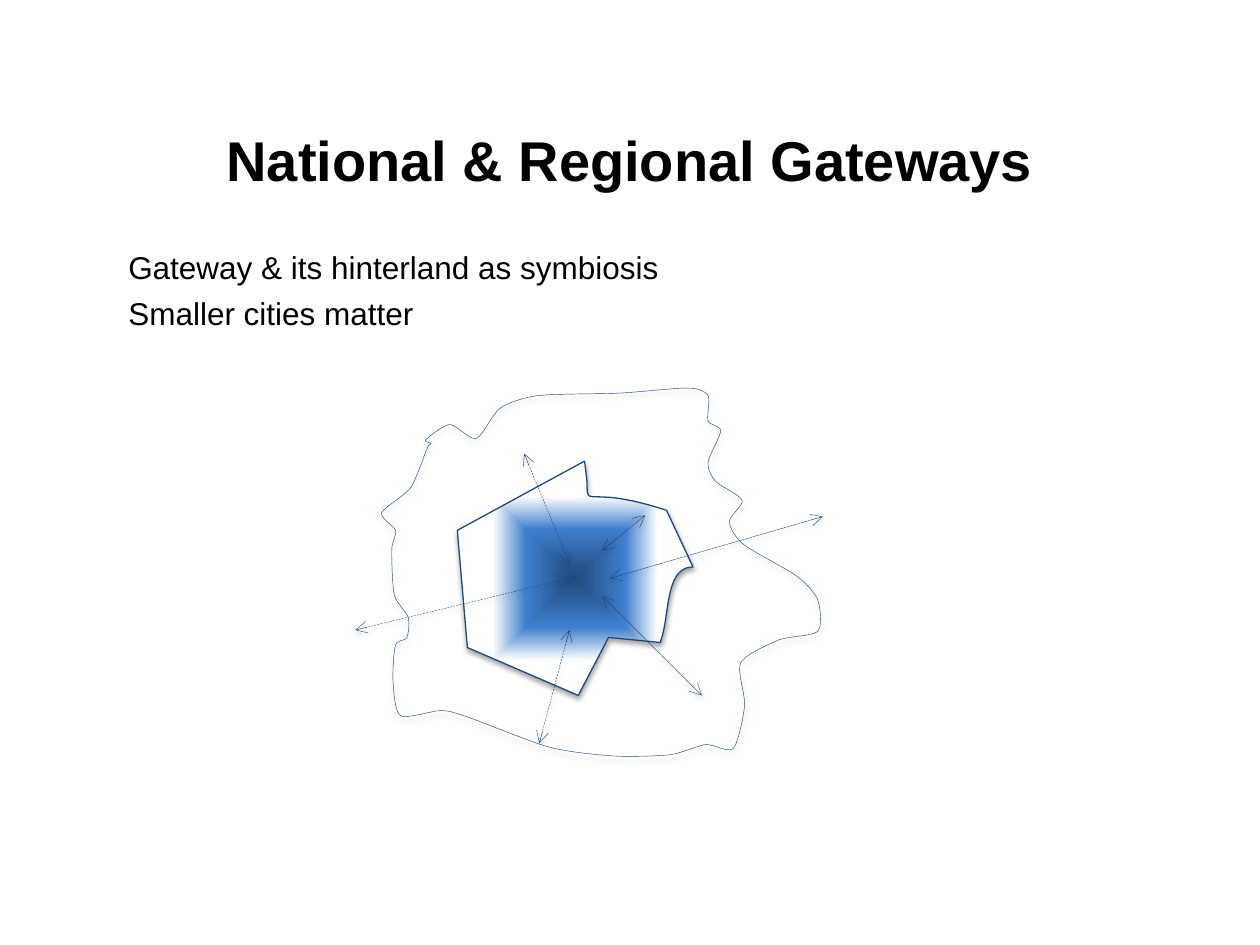
from dataclasses import dataclass
from lxml.etree import SubElement
from pptx import Presentation
from pptx.dml.color import RGBColor
from pptx.enum.dml import MSO_LINE
from pptx.enum.shapes import MSO_CONNECTOR
from pptx.enum.text import MSO_ANCHOR, PP_ALIGN
from pptx.oxml.ns import qn
from pptx.util import Inches, Pt

Point = tuple[float, float]
COLORS = {"text": "000000", "navy": "1F497D", "blue": "3F80CE", "white": "FFFFFF"}
GRADIENT = {"navy": 0, "blue": 42, "white": 70}


@dataclass(frozen=True)
class Flow:
    start: Point
    end: Point
    dash: MSO_LINE


FLOWS_BELOW_COAST = (
    Flow((4.78, 4.37), (5.12, 4.09), MSO_LINE.SQUARE_DOT),
    Flow((4.52, 4.47), (4.16, 3.6), MSO_LINE.DASH),
    Flow((4.52, 5), (4.28, 5.9), MSO_LINE.DASH),
)
FLOWS_ABOVE_COAST = (
    Flow((4.78, 4.73), (5.57, 5.52), MSO_LINE.SQUARE_DOT),
    Flow((4.84, 4.59), (6.53, 4.1), MSO_LINE.SQUARE_DOT),
    Flow((4.52, 4.59), (2.82, 5), MSO_LINE.DASH),
)
COAST = (
    (3.39, 3.56), (3.26, 3.87), (3.03, 4.07), (3.14, 4.21), (3.11, 4.36),
    (3.13, 4.72), (3.24, 4.9), (3.23, 5.06), (3.14, 5.12), (3.12, 5.41),
    (3.18, 5.68), (3.5, 5.64), (3.71, 5.69), (4.36, 5.93), (4.87, 6),
    (5.32, 5.99), (5.6, 5.91), (5.82, 5.94), (5.91, 5.6), (5.88, 5.26),
    (6.18, 5.08), (6.49, 5.01), (6.49, 4.76), (6.32, 4.57), (5.9, 4.32),
    (5.79, 4.14), (5.89, 3.97), (5.68, 3.82), (5.62, 3.67), (5.72, 3.42),
    (5.62, 3.34), (5.62, 3.14), (5.46, 3.08), (4.92, 3.12), (4.27, 3.14),
    (3.97, 3.24), (3.78, 3.48), (3.57, 3.37), (3.38, 3.49), (3.42, 3.52),
)


def curve(start: Point, first: Point, second: Point, end: Point, steps: int = 12) -> list[Point]:
    points = []
    for step in range(steps + 1):
        t = step / steps
        weights = ((1 - t) ** 3, 3 * t * (1 - t) ** 2, 3 * t * t * (1 - t), t ** 3)
        corners = (start, first, second, end)
        points.append(tuple(sum(w * c[axis] for w, c in zip(weights, corners)) for axis in (0, 1)))
    return points


def handle(anchor: Point, toward: Point, away: Point) -> Point:
    return tuple(a + (b - c) / 8 for a, b, c in zip(anchor, toward, away))


def smooth_loop(knots: tuple[Point, ...]) -> list[Point]:
    points = []
    for index, end in enumerate(knots):
        before, start = knots[index - 2], knots[index - 1]
        after = knots[(index + 1) % len(knots)]
        points += curve(start, handle(start, end, before), handle(end, start, after), end)[:-1]
    return points


HINTERLAND = [
    (4.64, 3.66), (3.63, 4.21), (3.71, 5.14), (4.59, 5.52), (4.83, 5.06),
    *curve((5.24, 5.1), (5.32, 4.9), (5.27, 4.5), (5.5, 4.5)),
    *curve((5.29, 4.05), (4.65, 3.84), (4.66, 4.05), (4.66, 3.83)),
]


def add_shadow(shape, distance: float, opacity: int) -> None:
    effects = SubElement(shape._element.spPr, qn("a:effectLst"))
    shadow = SubElement(effects, qn("a:outerShdw"), blurRad=str(Pt(3.1)), dist=str(Pt(distance)),
                        dir="5400000", rotWithShape="0")
    color = SubElement(shadow, qn("a:srgbClr"), val=COLORS["text"])
    SubElement(color, qn("a:alpha"), val=str(opacity * 1000))


def set_line(shape, width: float) -> None:
    shape.line.color.rgb = RGBColor.from_string(COLORS["navy"])
    shape.line.width = Pt(width)


def add_region(shapes, points: list[Point], line_width: float):
    corners = [(Inches(x), Inches(y)) for x, y in points]
    builder = shapes.build_freeform(*corners[0])
    builder.add_line_segments(corners[1:], close=True)
    region = builder.convert_to_shape()
    region.fill.background()
    set_line(region, line_width)
    add_shadow(region, 1.8, 35)
    return region


def fill_from_center(shape) -> None:
    properties = shape._element.spPr
    empty_fill = properties.find(qn("a:noFill"))
    gradient = SubElement(properties, qn("a:gradFill"), rotWithShape="1")
    properties.replace(empty_fill, gradient)
    stops = SubElement(gradient, qn("a:gsLst"))
    for name, position in GRADIENT.items():
        stop = SubElement(stops, qn("a:gs"), pos=str(position * 1000))
        SubElement(stop, qn("a:srgbClr"), val=COLORS[name])
    shade = SubElement(gradient, qn("a:path"), {"path": "shape"})
    SubElement(shade, qn("a:fillToRect"), {side: "50000" for side in "ltrb"})


def add_flows(shapes, flows: tuple[Flow, ...]) -> None:
    for flow in flows:
        ends = [Inches(value) for value in (*flow.start, *flow.end)]
        arrow = shapes.add_connector(MSO_CONNECTOR.STRAIGHT, *ends)
        set_line(arrow, 0.25)
        arrow.line.dash_style = flow.dash
        for tag in ("a:headEnd", "a:tailEnd"):
            SubElement(arrow.line._get_or_add_ln(), qn(tag), type="arrow")
        add_shadow(arrow, 1.6, 38)


def add_text(page, lines: tuple[str, ...], left: float, top: float, width: float, height: float,
             *, size: int, bold: bool = False, align: PP_ALIGN = PP_ALIGN.LEFT,
             anchor: MSO_ANCHOR = MSO_ANCHOR.TOP) -> None:
    box = page.shapes.add_textbox(Inches(left), Inches(top), Inches(width), Inches(height))
    frame = box.text_frame
    frame.word_wrap = True
    frame.vertical_anchor = anchor
    for index, line in enumerate(lines):
        para = frame.add_paragraph() if index else frame.paragraphs[0]
        para.alignment = align
        if index:
            para.space_before = Pt(4.4)
        span = para.add_run()
        span.text = line
        span.font.name = "Arial"
        span.font.size = Pt(size)
        span.font.bold = bold
        span.font.color.rgb = RGBColor.from_string(COLORS["text"])


def main() -> None:
    """Build the gateways slide and save it."""
    deck = Presentation()
    deck.slide_width, deck.slide_height = Inches(10), Inches(7.5)
    page = deck.slides.add_slide(deck.slide_layouts[6])
    add_text(page, ("Gateway & its hinterland as symbiosis", "Smaller cities matter"),
             0.92, 1.92, 8.17, 3.92, size=18)
    add_text(page, ("National & Regional Gateways",), 0.5, 0.95, 9, 0.63,
             size=32, bold=True, align=PP_ALIGN.CENTER, anchor=MSO_ANCHOR.MIDDLE)
    diagram = page.shapes.add_group_shape().shapes
    fill_from_center(add_region(diagram, HINTERLAND, 0.75))
    add_flows(diagram, FLOWS_BELOW_COAST)
    add_region(diagram, smooth_loop(COAST), 0.25)
    add_flows(diagram, FLOWS_ABOVE_COAST)
    deck.save("out.pptx")


if __name__ == "__main__":
    main()
